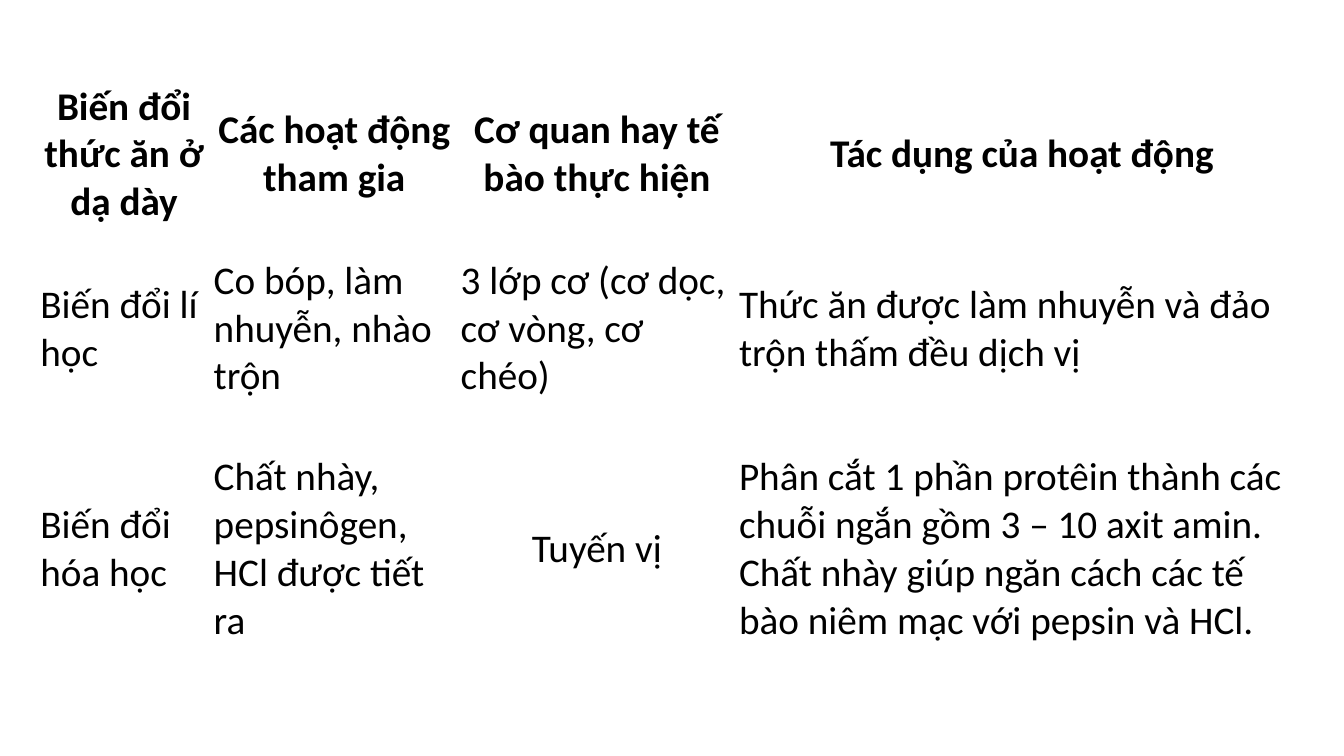
from pptx import Presentation
from pptx.dml.color import RGBColor
from pptx.enum.text import MSO_ANCHOR, PP_ALIGN
from pptx.util import Emu, Pt

LEFT, CENTER = PP_ALIGN.LEFT, PP_ALIGN.CENTER
MIDDLE = MSO_ANCHOR.MIDDLE
EMU_PER_PX = 9144
COLORS = {"text": "000000"}
COLUMN_WIDTHS = [172, 245, 276, 567]
BLANK_LAYOUT = 6

HEADINGS = ["Biến đổi thức ăn ở dạ dày", "Các hoạt động tham gia",
            "Cơ quan hay tế bào thực hiện", "Tác dụng của hoạt động"]
PHYSICAL = ["Biến đổi lí học", "Co bóp, làm nhuyễn, nhào trộn",
            "3 lớp cơ (cơ dọc, cơ vòng, cơ chéo)",
            "Thức ăn được làm nhuyễn và đảo trộn thấm đều dịch vị"]
CHEMICAL = ["Biến đổi hóa học", "Chất nhày, pepsinôgen, HCl được tiết ra",
            "Tuyến vị",
            "Phân cắt 1 phần protêin thành các chuỗi ngắn gồm 3 – 10 axit amin. "
            "Chất nhày giúp ngăn cách các tế bào niêm mạc với pepsin và HCl."]


def px(length):
    """Turn whole px into EMU."""
    return Emu(length * EMU_PER_PX)


def write(frame, text, size=28, bold=False, align=LEFT, color="text", font="Calibri"):
    """Put formatted text into a text frame."""
    paragraph = frame.paragraphs[0]
    paragraph.alignment = align
    run = paragraph.add_run()
    run.text = text
    run.font.name = font
    run.font.size = Pt(size)
    run.font.bold = bold
    run.font.color.rgb = RGBColor.from_string(COLORS[color])


class DigestionSlide:
    """Holds the table style and the current slide."""

    def __init__(self, slide, column_widths, inset=3):
        """Keep the slide and the shared column grid."""
        self.slide = slide
        self.column_widths = column_widths
        self.inset = px(inset)

    def table(self, left, top, rows):
        """Add a plain table from (height, texts, formats by column) rows."""
        grid = self.slide.shapes.add_table(
            len(rows), len(self.column_widths), px(left), px(top),
            px(sum(self.column_widths)), px(sum(row[0] for row in rows))).table
        grid.first_row = grid.horz_banding = False
        for column, width in zip(grid.columns, self.column_widths):
            column.width = px(width)
        for table_row, (height, texts, formats) in zip(grid.rows, rows):
            table_row.height = px(height)
            for index, (cell, text) in enumerate(zip(table_row.cells, texts)):
                self.cell(cell, text, **formats.get(index, {}))

    def cell(self, cell, text, **text_format):
        """Clear a cell's fill, set its insets and write its text."""
        cell.fill.background()
        cell.vertical_anchor = MIDDLE
        cell.margin_left = cell.margin_right = self.inset
        cell.margin_top = cell.margin_bottom = self.inset
        write(cell.text_frame, text, **text_format)


def main():
    """Build and save the slide."""
    deck = Presentation()
    deck.slide_width, deck.slide_height = px(1333), px(750)
    slide = deck.slides.add_slide(deck.slide_layouts[BLANK_LAYOUT])
    digestion = DigestionSlide(slide, COLUMN_WIDTHS)
    heading_format = {index: {"bold": True, "align": CENTER}
                      for index in range(len(HEADINGS))}
    digestion.table(37, 79, [(97, HEADINGS, heading_format), (197, PHYSICAL, {})])
    digestion.table(37, 430, [(229, CHEMICAL, {2: {"align": CENTER}})])
    deck.save("out.pptx")


if __name__ == "__main__":
    main()
